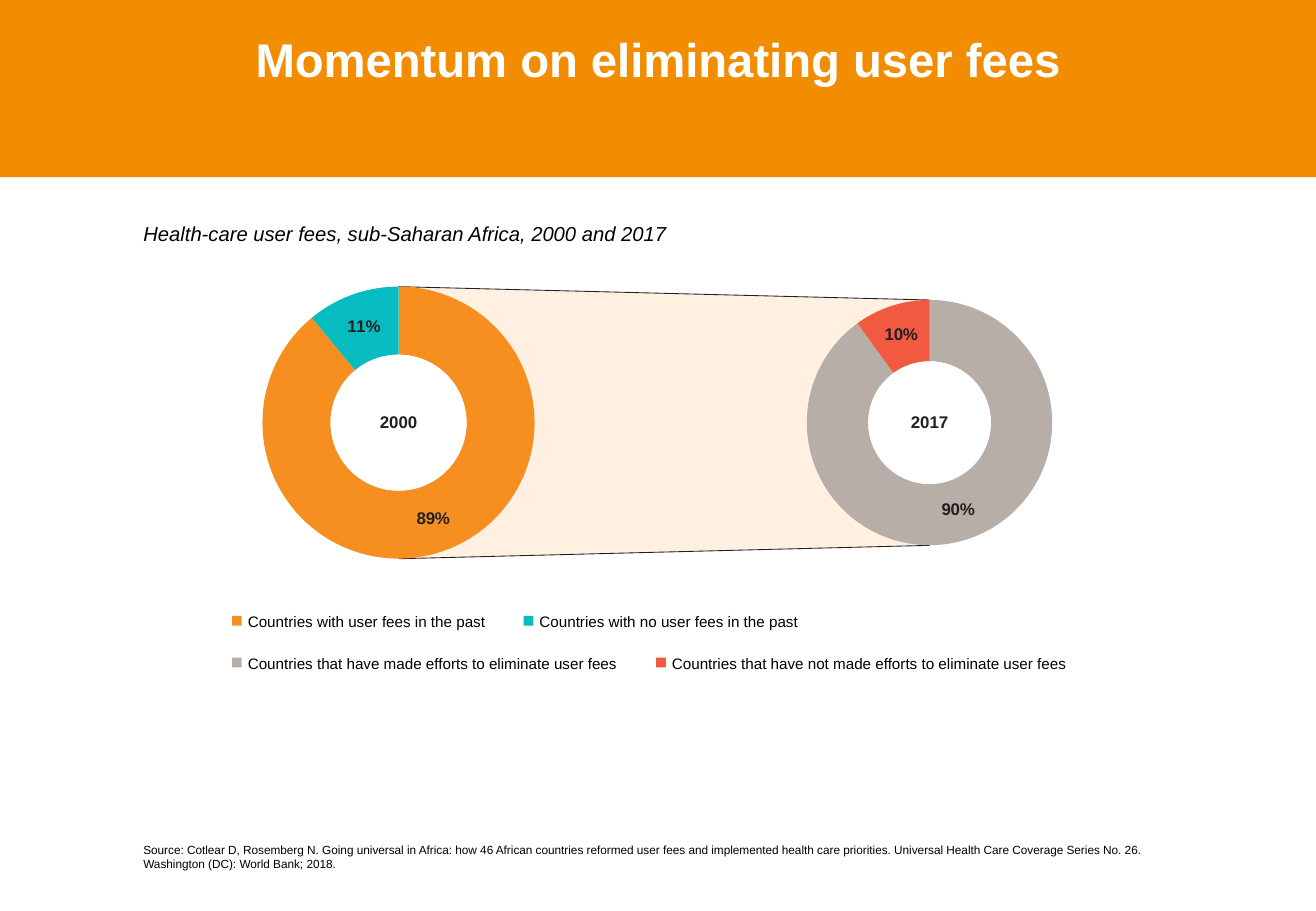
"""Build the slide on health-care user fees in 2000 and 2017."""
import pptx
import pptx.chart.data
import pptx.dml.color
import pptx.enum.chart
import pptx.enum.shapes
import pptx.enum.text
import pptx.oxml
import pptx.oxml.ns
import pptx.util

Inches = pptx.util.Inches
Pt = pptx.util.Pt
Shape = pptx.enum.shapes.MSO_SHAPE
Align = pptx.enum.text.PP_ALIGN
Anchor = pptx.enum.text.MSO_ANCHOR
COLORS = {
    "head": "F28C00", "white": "FFFFFF", "black": "000000", "ink": "231F20",
    "pale": "FFF0E2", "orange": "F78E20", "teal": "07BCC1",
    "gray": "B6AEA7", "red": "F15A40",
}
NS = pptx.oxml.ns.nsdecls("c", "a")
PLOT = (
    f'<c:layout {NS}><c:manualLayout><c:layoutTarget val="inner"/>'
    '<c:xMode val="edge"/><c:yMode val="edge"/><c:x val="0.1"/>'
    '<c:y val="0.1"/><c:w val="0.8"/><c:h val="0.8"/>'
    '</c:manualLayout></c:layout>'
)
CLEAR = f'<c:spPr {NS}><a:noFill/><a:ln><a:noFill/></a:ln></c:spPr>'


def paint(shape, color):
    shape.shadow.inherit = False
    shape.fill.solid()
    shape.fill.fore_color.rgb = pptx.dml.color.RGBColor.from_string(COLORS[color])
    shape.line.fill.background()


def write(shape, lines, size, color, pads, bold=False, italic=False,
          align=Align.LEFT, anchor=Anchor.TOP, wrap=True):
    frame = shape.text_frame
    frame.word_wrap = wrap
    frame.vertical_anchor = anchor
    frame.margin_left, frame.margin_top, frame.margin_right, frame.margin_bottom = map(Inches, pads)
    for pos, line in enumerate(lines):
        para = frame.add_paragraph() if pos else frame.paragraphs[0]
        para.alignment = align
        run = para.add_run()
        run.text = line
        font = run.font
        font.name, font.size, font.bold, font.italic = "Arial", Pt(size), bold, italic
        font.color.rgb = pptx.dml.color.RGBColor.from_string(COLORS[color])


deck = pptx.Presentation()
deck.slide_width, deck.slide_height = Inches(10.83), Inches(7.5)
slide = deck.slides.add_slide(deck.slide_layouts[5])
shapes = slide.shapes

title = shapes.title
title.left, title.top, title.width, title.height = map(Inches, (0, 0.2, 10.83, 0.57))
write(title, ["Momentum on eliminating user fees"], 28, "white",
      (0.1, 0.05, 0.1, 0.05), bold=True, align=Align.CENTER, anchor=Anchor.MIDDLE)
head = shapes.add_shape(Shape.RECTANGLE, 0, 0, Inches(10.83), Inches(1.46))
paint(head, "head")
title.element.addprevious(head.element)

lead = shapes.add_textbox(0, Inches(1.77), Inches(10.83), Inches(0.3))
write(lead, ["Health-care user fees, sub-Saharan Africa, 2000 and 2017"], 12,
      "black", (1.18, 0.05, 0.31, 0.05), italic=True)
source = shapes.add_textbox(0, Inches(6.89), Inches(10.83), Inches(0.34))
write(source, [
    "Source: Cotlear D, Rosemberg N. Going universal in Africa: how 46 African countries "
    "reformed user fees and implemented health care priorities. Universal Health Care "
    "Coverage Series No. 26.",
    "Washington (DC): World Bank; 2018.",
], 7, "black", (1.18, 0.05, 0.2, 0.05))

mid = 3.48
rings = [
    ("2000", 3.28, 1.12, [
        ("Countries with user fees in the past", 89, "orange"),
        ("Countries with no user fees in the past", 11, "teal")]),
    ("2017", 7.65, 1.01, [
        ("Countries that have made efforts to eliminate user fees", 90, "gray"),
        ("Countries that have not made efforts to eliminate user fees", 10, "red")]),
]

tops = [(Inches(x), Inches(mid - rad)) for _, x, rad, _ in rings]
feet = [(Inches(x), Inches(mid + rad)) for _, x, rad, _ in rings]
form = shapes.build_freeform(*tops[0])
form.add_line_segments([tops[1], feet[1], feet[0]], close=True)
paint(form.convert_to_shape(), "pale")
for start, end in (tops, feet):
    edge = shapes.add_connector(pptx.enum.shapes.MSO_CONNECTOR.STRAIGHT, *start, *end)
    edge.line.width = Pt(0.5)
    edge.line.color.rgb = pptx.dml.color.RGBColor.from_string(COLORS["ink"])
    edge.element.spPr.append(pptx.oxml.parse_xml(f"<a:effectLst {NS}/>"))

for year, x, rad, parts in rings:
    data = pptx.chart.data.CategoryChartData(number_format='0"%"')
    data.categories = [name for name, _, _ in parts]
    data.add_series(year, [share for _, share, _ in parts])
    side = rad * 2 / 0.8
    chart = shapes.add_chart(
        pptx.enum.chart.XL_CHART_TYPE.DOUGHNUT, Inches(x - side / 2),
        Inches(mid - side / 2), Inches(side), Inches(side), data).chart
    chart.has_legend = False
    chart.has_title = False
    chart.font.name, chart.font.size, chart.font.bold = "Arial", Pt(10), True
    chart.font.color.rgb = pptx.dml.color.RGBColor.from_string(COLORS["ink"])
    plot = chart.plots[0]
    plot.vary_by_categories = True
    plot.has_data_labels = True
    tags = plot.data_labels
    tags.show_value = True
    tags.show_percentage = False
    tags.number_format, tags.number_format_is_linked = '0"%"', False
    for pos, (_, _, color) in enumerate(parts):
        look = plot.series[0].points[pos].format
        look.fill.solid()
        look.fill.fore_color.rgb = pptx.dml.color.RGBColor.from_string(COLORS[color])
        look.line.fill.background()
    area = chart.element.xpath("c:chart/c:plotArea")[0]
    for old in area.xpath("c:layout"):
        area.remove(old)
    area.insert(0, pptx.oxml.parse_xml(PLOT))
    chart.element.xpath("c:chart")[0].addnext(pptx.oxml.parse_xml(CLEAR))

    hole = shapes.add_shape(Shape.OVAL, Inches(x - rad / 2), Inches(mid - rad / 2),
                            Inches(rad), Inches(rad))
    paint(hole, "white")
    write(hole, [year], 10, "ink", (0, 0, 0, 0.02), bold=True,
          align=Align.CENTER, anchor=Anchor.MIDDLE)

spots = [(1.91, 4.31), (1.91, 5.4)]
for row, (_, _, _, parts) in enumerate(rings):
    top = 5.02 + row * 0.345
    for x, (name, _, color) in zip(spots[row], parts):
        key = shapes.add_shape(Shape.RECTANGLE, Inches(x), Inches(top + 0.05),
                               Inches(0.08), Inches(0.08))
        paint(key, color)
        label = shapes.add_textbox(Inches(x + 0.12), Inches(top), Inches(3.27), Inches(0.17))
        write(label, [name], 9, "black", (0.01, 0.02, 0, 0), wrap=False)

deck.save("out.pptx")
